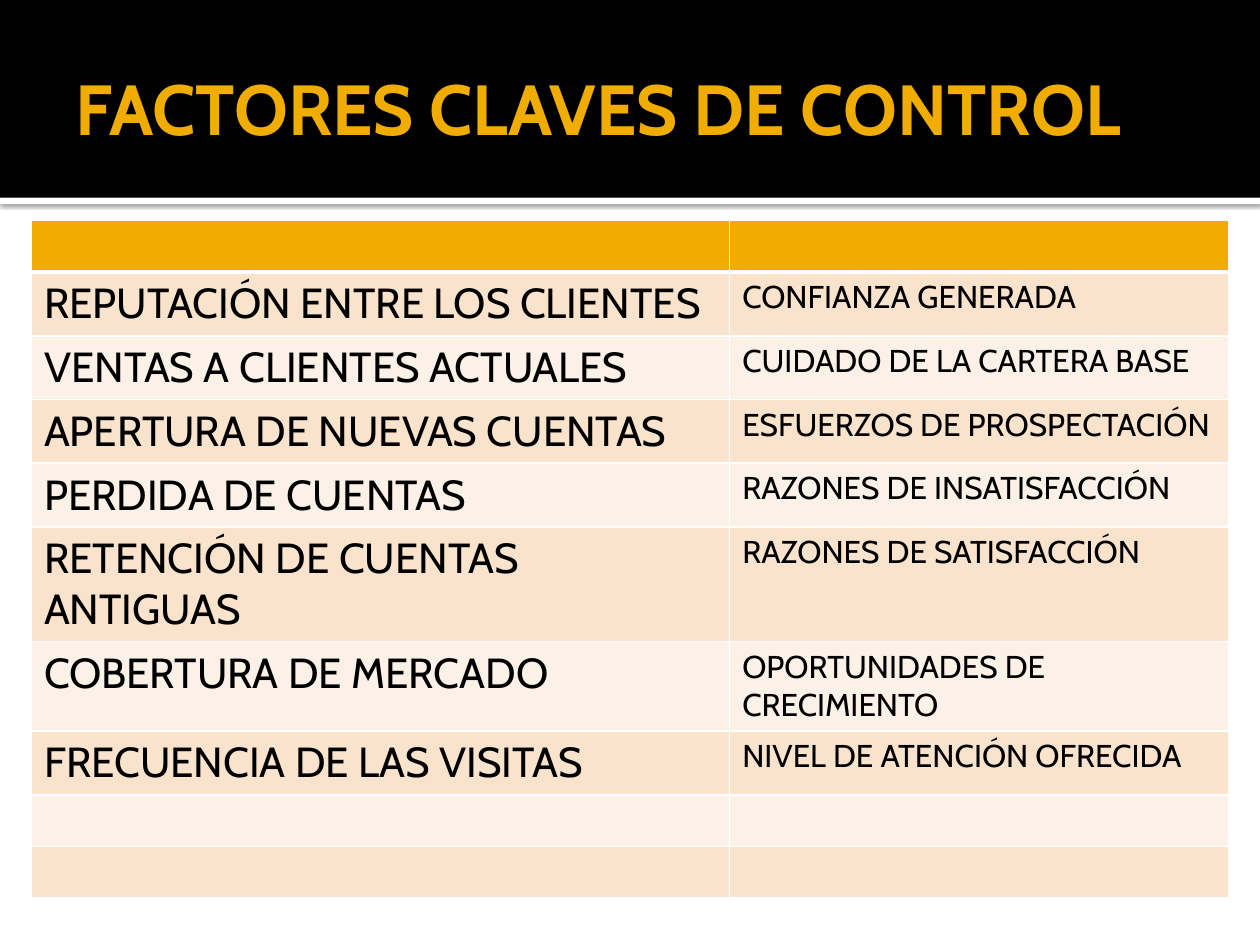
"""Build the slide on key control factors with its banner and two-column table."""
from dataclasses import dataclass

from lxml.etree import SubElement
from pptx import Presentation
from pptx.dml.color import RGBColor
from pptx.enum.shapes import MSO_SHAPE
from pptx.enum.text import MSO_ANCHOR, MSO_AUTO_SIZE, PP_ALIGN
from pptx.oxml.ns import qn
from pptx.util import Pt

FONT = "Cabin"
BLACK = RGBColor(0x00, 0x00, 0x00)
WHITE = RGBColor(0xFF, 0xFF, 0xFF)
GOLD = RGBColor(0xF0, 0xAD, 0x00)
PEACH = RGBColor(0xF9, 0xE3, 0xCC)
CREAM = RGBColor(0xFC, 0xF1, 0xE7)

COLUMN_WIDTHS = (399, 285)
TEXT_SIZES = (24, 18)
ROW_HEIGHT = 29.5


@dataclass
class Band:
    top: float
    height: float
    color: RGBColor
    has_shadow: bool = False


@dataclass
class Factor:
    name: str = ""
    meaning: str = ""


BANDS = [Band(113, 3.7, WHITE, has_shadow=True), Band(0, 113, BLACK)]

FACTORS = [
    Factor("REPUTACIÓN ENTRE LOS CLIENTES", "CONFIANZA GENERADA"),
    Factor("VENTAS A CLIENTES ACTUALES", "CUIDADO DE LA CARTERA BASE"),
    Factor("APERTURA DE NUEVAS CUENTAS", "ESFUERZOS DE PROSPECTACIÓN"),
    Factor("PERDIDA DE CUENTAS", "RAZONES DE INSATISFACCIÓN"),
    Factor("RETENCIÓN DE CUENTAS ANTIGUAS", "RAZONES DE SATISFACCIÓN"),
    Factor("COBERTURA DE MERCADO", "OPORTUNIDADES DE CRECIMIENTO"),
    Factor("FRECUENCIA DE LAS VISITAS", "NIVEL DE ATENCIÓN OFRECIDA"),
    Factor(),
    Factor(),
]


def format_paragraph(para, size: float, color: RGBColor, bold: bool = False) -> None:
    for span in para.runs:
        span.font.name = FONT
        span.font.size = Pt(size)
        span.font.bold = bold
        span.font.color.rgb = color


def add_shadow(box) -> None:
    effects = box._element.spPr.find(qn("a:effectLst"))
    shadow = SubElement(effects, qn("a:outerShdw"), blurRad=str(Pt(2.5)),
                        dist=str(Pt(0.8)), dir="5400000", rotWithShape="0")
    color = SubElement(shadow, qn("a:srgbClr"), val=str(BLACK))
    SubElement(color, qn("a:alpha"), val="60000")


def add_band(page, band: Band, layer: int) -> None:
    box = page.shapes.add_shape(MSO_SHAPE.RECTANGLE, 0, Pt(band.top), Pt(720), Pt(band.height))
    box.fill.solid()
    box.fill.fore_color.rgb = band.color
    box.line.fill.background()
    box.shadow.inherit = False
    if band.has_shadow:
        add_shadow(box)
    page.shapes._spTree.insert(2 + layer, box._element)


def fill_title(page) -> None:
    title = page.shapes.title
    title.left, title.top, title.width, title.height = Pt(36), Pt(12), Pt(648), Pt(99)
    frame = title.text_frame
    frame.text = "FACTORES CLAVES DE CONTROL"
    frame.word_wrap = True
    frame.auto_size = MSO_AUTO_SIZE.NONE
    frame.vertical_anchor = MSO_ANCHOR.MIDDLE
    frame.margin_left = Pt(7.2)
    frame.margin_right = frame.margin_top = frame.margin_bottom = Pt(3.6)
    frame.paragraphs[0].alignment = PP_ALIGN.LEFT
    format_paragraph(frame.paragraphs[0], 40.5, GOLD, bold=True)


def set_borders(cell, top: float, bottom: float) -> None:
    properties = cell._tc.get_or_add_tcPr()
    for side, width in {"lnL": 1, "lnR": 1, "lnT": top, "lnB": bottom}.items():
        line = SubElement(properties, qn(f"a:{side}"), w=str(Pt(width)))
        SubElement(SubElement(line, qn("a:solidFill")), qn("a:srgbClr"), val=str(WHITE))


def fill_row(table, index: int, factor: Factor, color: RGBColor) -> None:
    for column, text in enumerate((factor.name, factor.meaning)):
        cell = table.cell(index, column)
        set_borders(cell, top=3 if index == 1 else 1, bottom=3 if index == 0 else 1)
        cell.fill.solid()
        cell.fill.fore_color.rgb = color
        if text:
            cell.text_frame.text = text
            format_paragraph(cell.text_frame.paragraphs[0], TEXT_SIZES[column], BLACK)


def add_factor_table(page) -> None:
    count = len(FACTORS) + 1
    table = page.shapes.add_table(count, len(COLUMN_WIDTHS), Pt(18), Pt(126),
                                  Pt(sum(COLUMN_WIDTHS)), Pt(count * ROW_HEIGHT)).table
    for column, width in zip(table.columns, COLUMN_WIDTHS):
        column.width = Pt(width)
    fill_row(table, 0, Factor(), GOLD)
    for index, factor in enumerate(FACTORS, start=1):
        fill_row(table, index, factor, PEACH if index % 2 else CREAM)


def main() -> None:
    deck = Presentation()
    deck.slide_width, deck.slide_height = Pt(720), Pt(540)
    page = deck.slides.add_slide(deck.slide_layouts[5])
    for layer, band in enumerate(BANDS):
        add_band(page, band, layer)
    fill_title(page)
    add_factor_table(page)
    deck.save("out.pptx")


if __name__ == "__main__":
    main()
